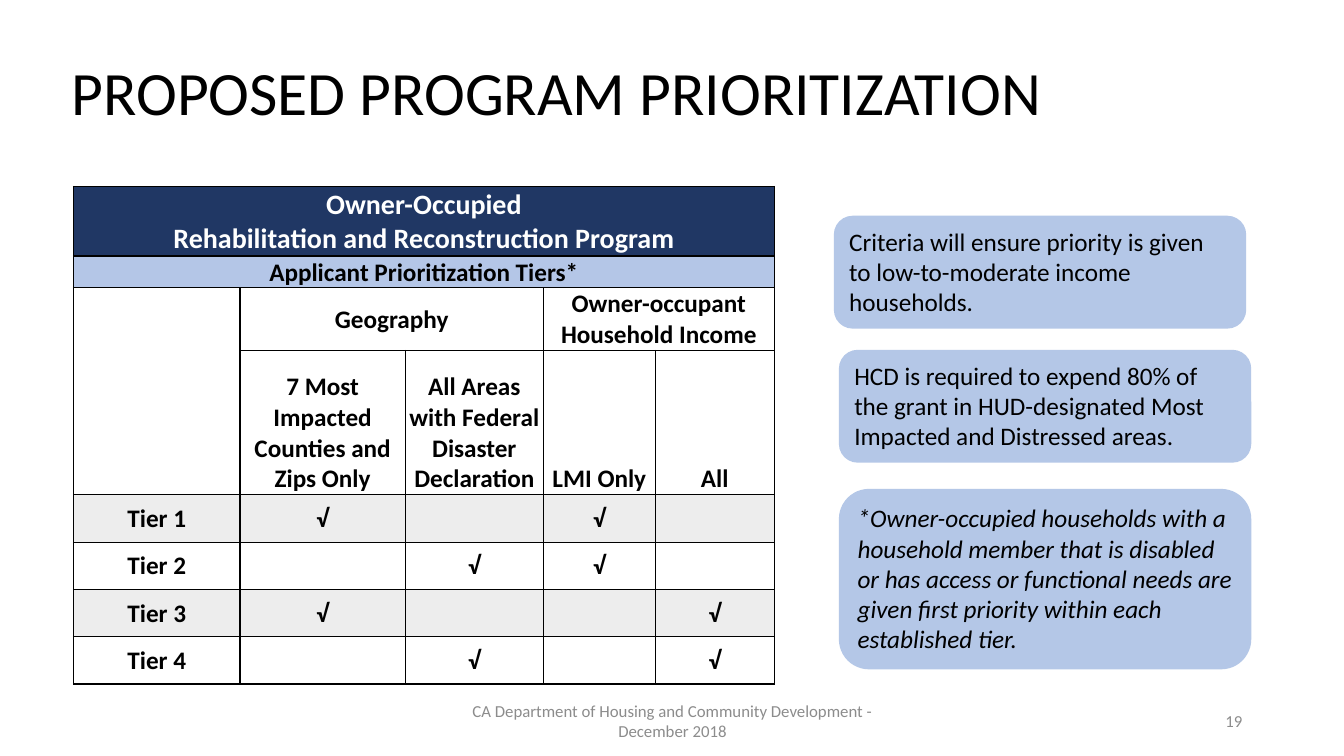
from lxml import etree
from pptx import Presentation
from pptx import util as u
from pptx.dml.color import RGBColor
from pptx.enum import shapes, text
from pptx.oxml.ns import qn

COLORS = {"ink": "000000", "white": "FFFFFF", "navy": "203764", "tier_bar": "B4C6E7",
          "band": "EDEDED", "note": "B4C7E7", "footer": "8C8C8C"}
ALIGN, ANCHOR = text.PP_ALIGN, text.MSO_ANCHOR

COLUMN_WIDTHS = [1.65, 1.64, 1.37, 1.11, 1.18]
ROW_HEIGHTS = [0.67, 0.31, 0.6, 1.43] + [0.47] * 4
# Borders at these column and row boundaries are heavier
HEAVY_COLUMNS = {0, 1, 3, 5}
HEAVY_ROWS = {0, 1, 2, 3, 8}
HEADER_ROWS = 4
CHECK = "√"
TABLE_ROWS = [
    ["Owner-Occupied\nRehabilitation and Reconstruction Program", "", "", "", ""],
    ["Applicant Prioritization Tiers*", "", "", "", ""],
    ["", "Geography", "", "Owner-occupant Household Income", ""],
    ["", "7 Most Impacted Counties and Zips Only",
     "All Areas with Federal Disaster Declaration", "LMI Only", "All"],
    ["Tier 1", CHECK, "", CHECK, ""],
    ["Tier 2", "", CHECK, CHECK, ""],
    ["Tier 3", CHECK, "", "", CHECK],
    ["Tier 4", "", CHECK, "", CHECK],
]
MERGES = [((0, 0), (0, 4)), ((1, 0), (1, 4)), ((2, 0), (3, 0)),
          ((2, 1), (2, 2)), ((2, 3), (2, 4))]

NOTES = [
    ((8.27, 2.14, 4.09, 1.12), False,
     "Criteria will ensure priority is given to low-to-moderate income households."),
    ((8.32, 3.47, 4.09, 1.12), False,
     "HCD is required to expend 80% of the grant in HUD-designated Most Impacted "
     "and Distressed areas."),
    ((8.32, 4.85, 4.09, 1.79), True,
     "*Owner-occupied households with a household member that is disabled or has access "
     "or functional needs are given first priority within each established tier."),
]


def rgb(color):
    return RGBColor.from_string(COLORS[color])


def apply(target, formats):
    for attribute, value in formats.items():
        setattr(target, attribute, value)


def inches(box):
    return [u.Inches(length) for length in box]


def write(frame, words, size, color="ink", align=ALIGN.LEFT, **font_format):
    frame.text = words
    for paragraph in frame.paragraphs:
        paragraph.alignment = align
        apply(paragraph.font, {"name": "Calibri", "size": u.Pt(size), **font_format})
        paragraph.font.color.rgb = rgb(color)


def add_title(slide, box):
    title = slide.shapes.title
    apply(title, dict(zip(("left", "top", "width", "height"), inches(box))))
    write(title.text_frame, "PROPOSED PROGRAM PRIORITIZATION", 44)
    apply(title.text_frame, {"vertical_anchor": ANCHOR.MIDDLE, "word_wrap": True,
                             "auto_size": text.MSO_AUTO_SIZE.NONE})
    title.text_frame.paragraphs[0].line_spacing = 0.9


def set_borders(cell, row, column):
    heavy = {"lnL": column in HEAVY_COLUMNS, "lnR": column + 1 in HEAVY_COLUMNS,
             "lnT": row in HEAVY_ROWS, "lnB": row + 1 in HEAVY_ROWS}
    properties = cell._tc.get_or_add_tcPr()
    for position, (side, is_heavy) in enumerate(heavy.items()):
        line = etree.Element(qn(f"a:{side}"), w=str(u.Pt(1 if is_heavy else 0.5)))
        fill = etree.SubElement(line, qn("a:solidFill"))
        etree.SubElement(fill, qn("a:srgbClr"), val=COLORS["ink"])
        properties.insert(position, line)


def cell_fill(row):
    if row < 2:
        return ("navy", "tier_bar")[row]
    return "band" if row >= HEADER_ROWS and row % 2 == 0 else None


def add_tier_table(slide, box):
    tiers = slide.shapes.add_table(len(ROW_HEIGHTS), len(COLUMN_WIDTHS), *inches(box)).table
    apply(tiers, {"first_row": False, "horz_banding": False})
    for column, width in zip(tiers.columns, COLUMN_WIDTHS):
        column.width = u.Inches(width)
    for row, height in zip(tiers.rows, ROW_HEIGHTS):
        row.height = u.Inches(height)

    # Cell text, fills and borders
    for r, labels in enumerate(TABLE_ROWS):
        for c, label in enumerate(labels):
            cell = tiers.cell(r, c)
            write(cell.text_frame, label, 20 if r == 0 else 18,
                  "white" if r == 0 else "ink", ALIGN.CENTER, bold=True)
            apply(cell, {"margin_left": u.Inches(0.01), "margin_right": u.Inches(0.01),
                         "margin_top": u.Inches(0.01), "margin_bottom": 0,
                         "vertical_anchor": ANCHOR.BOTTOM if r == 3 else ANCHOR.MIDDLE})
            fill = cell_fill(r)
            if fill:
                cell.fill.solid()
                cell.fill.fore_color.rgb = rgb(fill)
            else:
                cell.fill.background()
            set_borders(cell, r, c)

    for first, last in MERGES:
        tiers.cell(*first).merge(tiers.cell(*last))


def add_note(slide, box, italic, words):
    note = slide.shapes.add_shape(shapes.MSO_SHAPE.ROUNDED_RECTANGLE, *inches(box))
    note.shadow.inherit = False
    note.fill.solid()
    note.fill.fore_color.rgb = rgb("note")
    note.line.fill.background()
    write(note.text_frame, words, 18, italic=italic)
    apply(note.text_frame, {"word_wrap": True, "vertical_anchor": ANCHOR.TOP})


def add_footer_text(slide, box, words, align):
    footer = slide.shapes.add_textbox(*inches(box)).text_frame
    write(footer, words, 12, "footer", align)
    apply(footer, {"word_wrap": True, "vertical_anchor": ANCHOR.MIDDLE})


def main():
    deck = Presentation()
    apply(deck, {"slide_width": u.Inches(13.33), "slide_height": u.Inches(7.5)})
    slide = deck.slides.add_slide(deck.slide_layouts[5])

    # Title and table
    add_title(slide, (0.61, 0.22, 11.75, 1.45))
    add_tier_table(slide, (0.73, 1.85, sum(COLUMN_WIDTHS), sum(ROW_HEIGHTS)))

    # Notes beside the table
    for box, italic, words in NOTES:
        add_note(slide, box, italic, words)

    # Footer and slide number
    add_footer_text(slide, (4.42, 6.95, 4.5, 0.4),
                    "CA Department of Housing and Community Development - December 2018",
                    ALIGN.CENTER)
    add_footer_text(slide, (9.42, 6.95, 3, 0.4), "19", ALIGN.RIGHT)
    deck.save("out.pptx")


if __name__ == "__main__":
    main()
